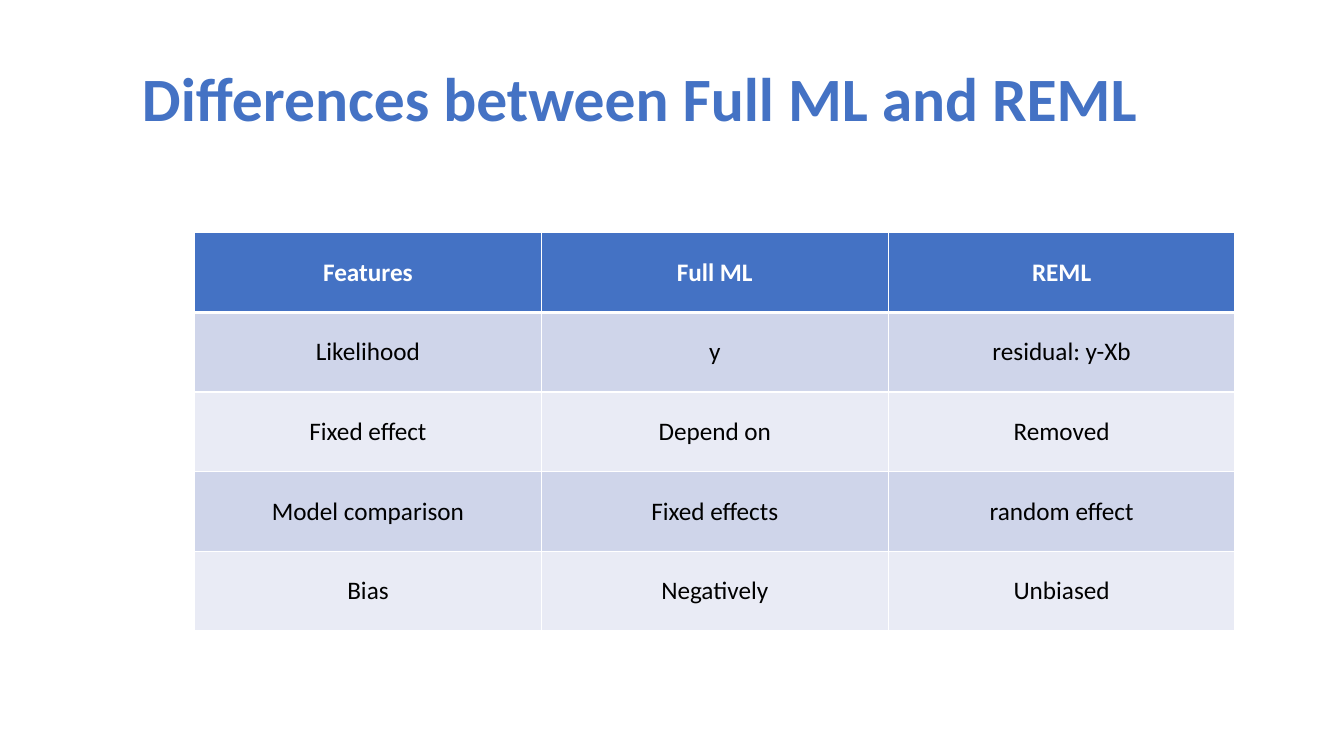
from lxml import etree
from pptx import Presentation
from pptx.dml.color import RGBColor
from pptx.enum.text import MSO_ANCHOR, PP_ALIGN
from pptx.oxml.ns import qn
from pptx.util import Inches, Pt

MIDDLE = MSO_ANCHOR.MIDDLE
LEFT, CENTER = PP_ALIGN.LEFT, PP_ALIGN.CENTER

BLUE = RGBColor(0x44, 0x72, 0xC4)
BAND_DARK = RGBColor(0xCF, 0xD5, 0xEA)
BAND_LIGHT = RGBColor(0xE9, 0xEB, 0xF5)
WHITE = RGBColor(0xFF, 0xFF, 0xFF)
BLACK = RGBColor(0x00, 0x00, 0x00)

COMPARISON = [
    ["Features", "Full ML", "REML"],
    ["Likelihood", "y", "residual: y-Xb"],
    ["Fixed effect", "Depend on", "Removed"],
    ["Model comparison", "Fixed effects", "random effect"],
    ["Bias", "Negatively", "Unbiased"],
]


class SlideBuilder:
    font = "Calibri"
    title_size = 44
    cell_size = 18

    def __init__(self, s):
        self.s = s

    def add_text(self, tf, text, size, color, bold, align):
        p = tf.paragraphs[0]
        p.alignment = align
        r = p.add_run()
        r.text = text
        r.font.name = self.font
        r.font.size = Pt(size)
        r.font.bold = bold
        r.font.color.rgb = color
        return p

    def title(self, text, left, top, width, height):
        sp = self.s.shapes.add_textbox(
            Inches(left), Inches(top), Inches(width), Inches(height))
        tf = sp.text_frame
        tf.word_wrap = True
        tf.vertical_anchor = MIDDLE
        p = self.add_text(tf, text, self.title_size, BLUE, True, LEFT)
        p.line_spacing = 0.9

    def borders(self, cell, top=1, bottom=1):
        """Draw white cell borders; widths are in points."""
        tcPr = cell._tc.get_or_add_tcPr()
        widths = {"a:lnL": 1, "a:lnR": 1, "a:lnT": top, "a:lnB": bottom}
        for tag, width in widths.items():
            ln = etree.SubElement(tcPr, qn(tag), w=str(Pt(width)))
            fill = etree.SubElement(ln, qn("a:solidFill"))
            etree.SubElement(fill, qn("a:srgbClr"), val=str(WHITE))

    def table(self, rows, left, top, col_width, row_height):
        """Build a banded table whose first row is the header."""
        n_rows, n_cols = len(rows), len(rows[0])
        table = self.s.shapes.add_table(
            n_rows, n_cols, Inches(left), Inches(top),
            Inches(col_width * n_cols), Inches(row_height * n_rows)).table
        for i, row in enumerate(rows):
            header = i == 0
            band = BAND_DARK if i % 2 else BAND_LIGHT
            for j, text in enumerate(row):
                cell = table.cell(i, j)
                cell.vertical_anchor = MIDDLE
                self.borders(cell, top=3 if i == 1 else 1,
                             bottom=3 if header else 1)
                cell.fill.solid()
                cell.fill.fore_color.rgb = BLUE if header else band
                self.add_text(cell.text_frame, text, self.cell_size,
                              WHITE if header else BLACK, header, CENTER)


def main():
    prs = Presentation()
    prs.slide_width, prs.slide_height = Inches(13.33), Inches(7.5)
    slide = SlideBuilder(prs.slides.add_slide(prs.slide_layouts[6]))
    slide.table(COMPARISON, 1.93, 2.31, col_width=3.44, row_height=0.79)
    slide.title("Differences between Full ML and REML", 1.31, 0.32, 10.71, 1.37)
    prs.save("out.pptx")


if __name__ == "__main__":
    main()
